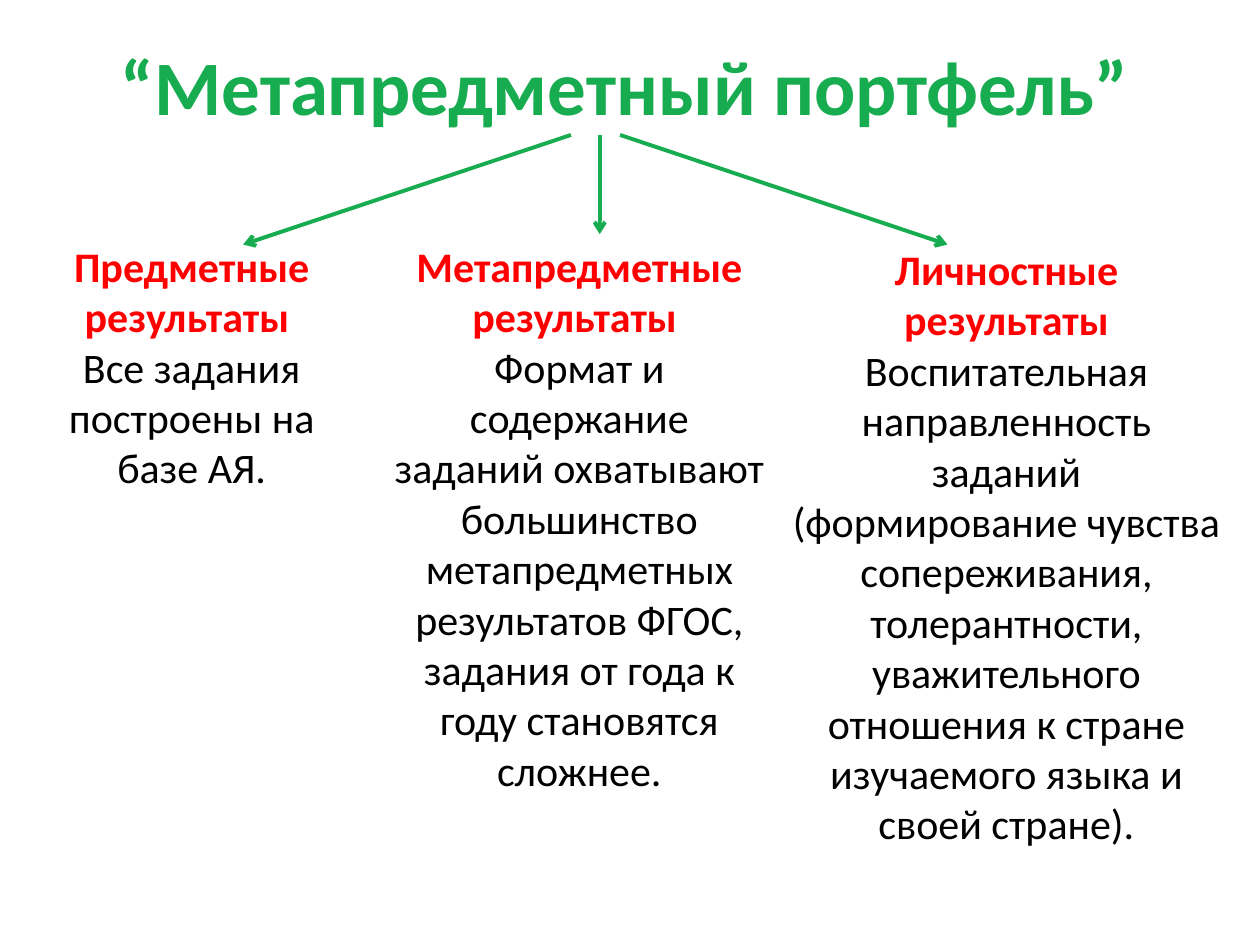
from lxml import etree
from pptx import Presentation
from pptx.dml.color import RGBColor
from pptx.enum.shapes import MSO_CONNECTOR
from pptx.enum.text import MSO_ANCHOR, PP_ALIGN
from pptx.oxml.ns import qn
from pptx.util import Cm, Pt

GREEN = RGBColor(0x18, 0xAC, 0x50)
RED = RGBColor(0xFF, 0x00, 0x00)
BLACK = RGBColor(0x00, 0x00, 0x00)

TITLE_FORMAT = {"name": "Calibri", "size": Pt(44), "bold": True, "color": GREEN}
HEADING_FORMAT = {"name": "Calibri", "size": Pt(24), "bold": True, "color": RED}
BODY_FORMAT = {"name": "Calibri", "size": Pt(24), "bold": False, "color": BLACK}

TITLE_BOX = (1.17, 0.46, 22.86, 2.51)
ARROWS_BOX = (4.9, 2.72, 14.2, 2.21)
COLUMN_INDENT = Cm(0.95)

# Box, anchor and paragraphs of each column; a paragraph is a list of runs
COLUMNS = [
    ((-0.51, 4.72, 7.8, 7.01), MSO_ANCHOR.TOP, [
        [("Предметные результаты ", HEADING_FORMAT)],
        [("Все задания построены на базе АЯ.", BODY_FORMAT)],
    ]),
    ((6.71, 4.72, 8.99, 8.79), MSO_ANCHOR.TOP, [
        [("Метапредметные результаты ", HEADING_FORMAT)],
        [("Формат и содержание заданий охватывают большинство метапредметных "
          "результатов ФГОС, задания от года к году становятся сложнее.", BODY_FORMAT)],
    ]),
    ((14.71, 6.32, 10.21, 9.37), MSO_ANCHOR.MIDDLE, [
        [("Личностные результаты ", HEADING_FORMAT),
         ("Воспитательная направленность заданий (формирование чувства "
          "сопереживания, толерантности, уважительного отношения к стране "
          "изучаемого языка и своей стране).", BODY_FORMAT)],
    ]),
]


def add_run(paragraph, text, run_format):
    run = paragraph.add_run()
    run.text = text
    for attribute, value in run_format.items():
        if attribute == "color":
            run.font.color.rgb = value
        else:
            setattr(run.font, attribute, value)


def add_text(slide, box, anchor, paragraphs, indent=0):
    frame = slide.shapes.add_textbox(*map(Cm, box)).text_frame
    for attribute, value in {"word_wrap": True, "vertical_anchor": anchor}.items():
        setattr(frame, attribute, value)
    for index, runs in enumerate(paragraphs):
        paragraph = frame.add_paragraph() if index else frame.paragraphs[0]
        paragraph.alignment = PP_ALIGN.CENTER
        if indent:
            paragraph.font.size = Pt(24)
            paragraph._p.get_or_add_pPr().set("marL", str(indent))
        for text, run_format in runs:
            add_run(paragraph, text, run_format)


def add_title(slide, box):
    add_text(slide, box, MSO_ANCHOR.MIDDLE, [[("“Метапредметный портфель”", TITLE_FORMAT)]])


def add_column(slide, box, anchor, paragraphs):
    add_text(slide, box, anchor, paragraphs, COLUMN_INDENT)


def add_arrows(slide, box):
    left, top, width, height = box
    # Start offset, end offset and drop of the middle, right and left arrows
    for start, end, drop in [(7.19, 7.19, 2), (7.6, width, height), (6.61, 0, height)]:
        arrow = slide.shapes.add_connector(
            MSO_CONNECTOR.STRAIGHT,
            Cm(left + start), Cm(top), Cm(left + end), Cm(top + drop))
        arrow.line.color.rgb = GREEN
        arrow.line.width = Pt(2.25)
        etree.SubElement(arrow.line._get_or_add_ln(), qn("a:tailEnd"), type="arrow")
        etree.SubElement(arrow._element.spPr, qn("a:effectLst"))


def main():
    presentation = Presentation()
    presentation.slide_width, presentation.slide_height = Cm(25.4), Cm(19.05)
    slide = presentation.slides.add_slide(presentation.slide_layouts[6])

    add_title(slide, TITLE_BOX)
    for box, anchor, paragraphs in COLUMNS:
        add_column(slide, box, anchor, paragraphs)
    add_arrows(slide, ARROWS_BOX)

    presentation.save("out.pptx")


if __name__ == "__main__":
    main()
